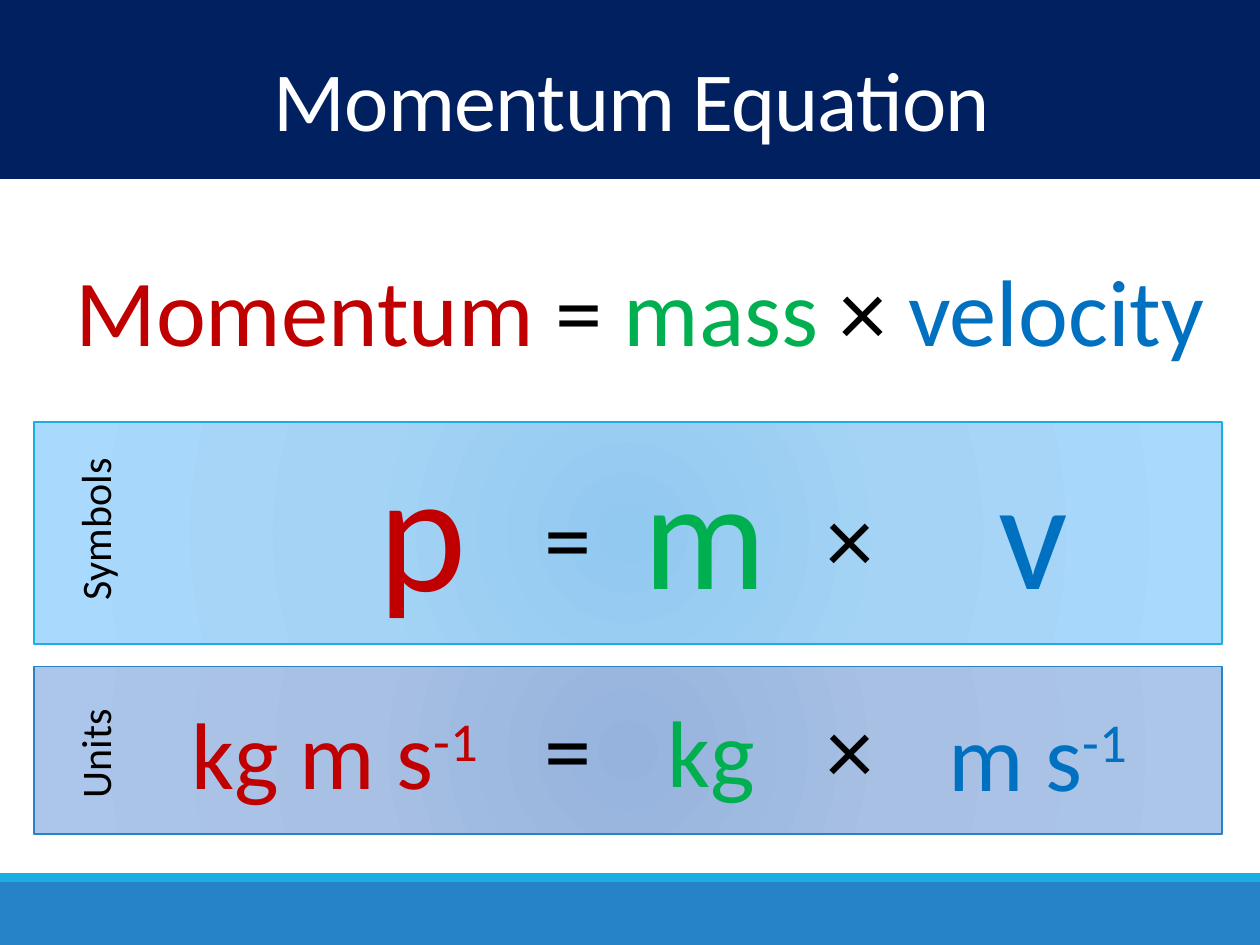
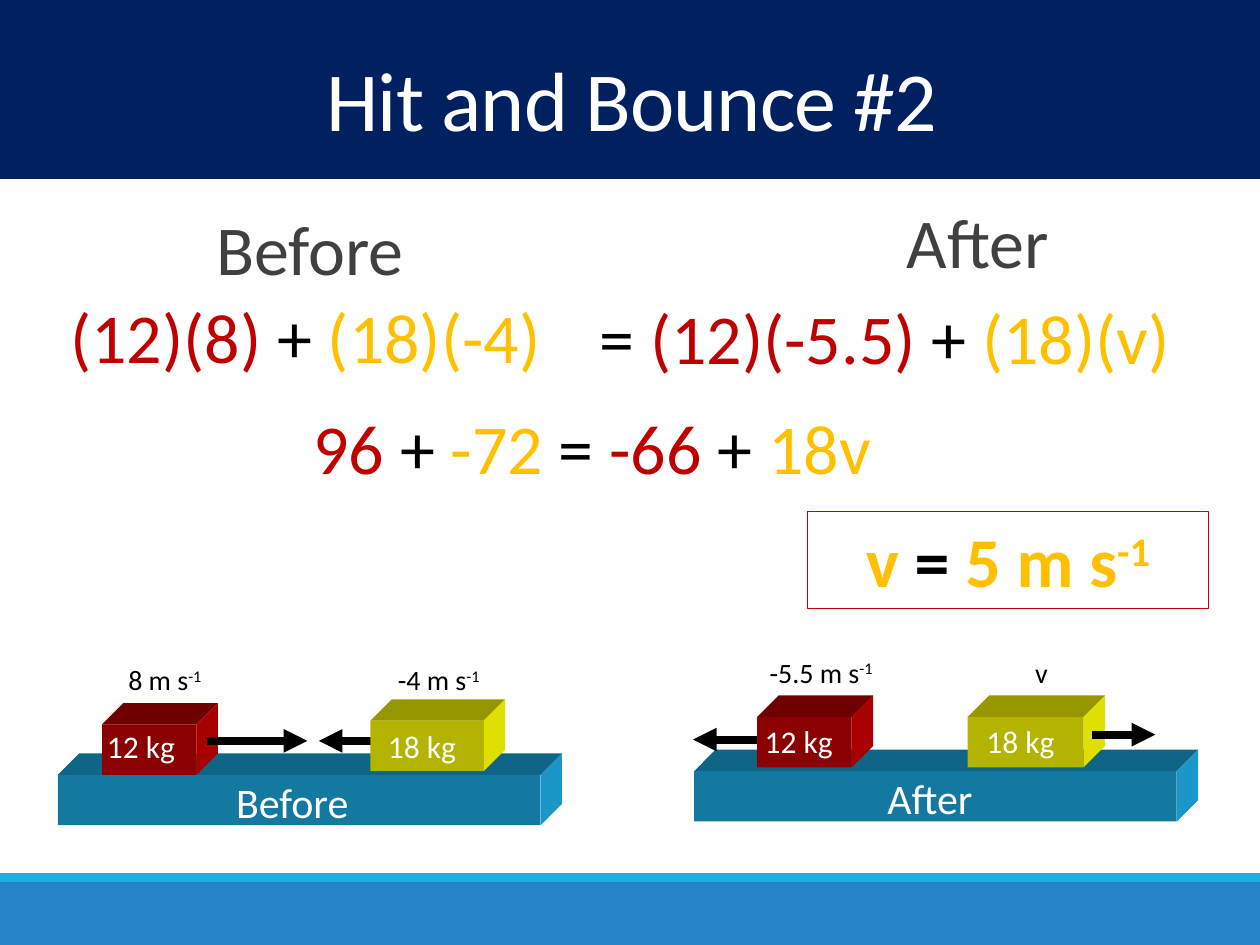
from pptx import Presentation
from pptx.dml.color import RGBColor
from pptx.enum.shapes import MSO_CONNECTOR as Connector, MSO_SHAPE as Preset
from pptx.enum.text import MSO_ANCHOR as Anchor, MSO_AUTO_SIZE as AutoSize, PP_ALIGN as Align
from pptx.oxml import parse_xml
from pptx.oxml.ns import nsdecls, qn
from pptx.util import Inches, Pt

FONT = "Calibri"
COLOURS = {
    "navy": "002060", "blue": "2683C6", "sky": "1CADE4", "white": "FFFFFF", "black": "000000",
    "grey": "404040", "red": "C00000", "green": "00B050", "azure": "0070C0", "amber": "FFC000",
}
# Front, top and side of each solid
SOLIDS = {
    "platform": ("1479A0", "0F6585", "1A96C8"),
    "red block": ("8B0000", "700000", "A80000"),
    "yellow block": ("B4B400", "969600", "E0E000"),
}

deck = Presentation()
deck.slide_width, deck.slide_height = Inches(10), Inches(7.5)
CELL = deck.slide_width // 10  # the slide is a grid of 10 columns by 7.5 rows
DEPTH = 0.17


def cells(*counts):
    return [round(count * CELL) for count in counts]


def write(page, spans, left, top, width, height, size, align=Align.LEFT):
    """Text box made of (text, colour) spans; a leading ^ raises the span."""
    box = page.shapes.add_textbox(*cells(left, top, width, height))
    box.text_frame.word_wrap = True
    para = box.text_frame.paragraphs[0]
    para.alignment = align
    para.font.name, para.font.size = FONT, Pt(size)
    for text, colour in spans:
        span = para.add_run()
        span.text = text.lstrip("^")
        span.font.color.rgb = RGBColor.from_string(COLOURS[colour])
        if text.startswith("^"):
            span._r.get_or_add_rPr().set("baseline", "30000")
    return box


# Shared frame: title band, two footer bands, title
BANDS = [("navy", 0, 1.42), ("blue", 7, 0.5), ("sky", 6.93, 0.07)]
pages = []
for heading in ("Momentum Equation", "Hit and Bounce #2"):
    page = deck.slides.add_slide(deck.slide_layouts[5])
    for colour, top, height in BANDS:
        band = page.shapes.add_shape(Preset.RECTANGLE, *cells(0, top, 10, height))
        band.shadow.inherit = False
        band.fill.solid()
        band.fill.fore_color.rgb = RGBColor.from_string(COLOURS[colour])
        band.line.fill.background()
    title = page.shapes.title
    title.element.getparent().append(title.element)  # bring in front of the band
    title.left, title.top, title.width, title.height = cells(0.03, 0.42, 9.97, 0.84)
    title.text = heading
    title.text_frame.auto_size = AutoSize.NONE
    title.text_frame.vertical_anchor = Anchor.MIDDLE
    para = title.text_frame.paragraphs[0]
    para.alignment, para.line_spacing = Align.CENTER, 0.85
    para.font.name, para.font.size = FONT, Pt(48)
    para.font.color.rgb = RGBColor.from_string(COLOURS["white"])
    para.runs[0]._r.get_or_add_rPr().set("spc", "-50")
    pages.append(page)
equation_page, bounce_page = pages

# Slide 1: panels with a radial gradient, a sideways label and two operators
PANELS = [
    ("Symbols", 3.35, 1.76, "sky", ("92C9F0", "A4D3F5", "A9D9FD"), 4.2, 3.75),
    ("Units", 5.29, 1.33, "blue", ("95B3DD", "A7C0E3", "ACC6EB"), 5.98, 5.43),
]
for label, top, height, edge, shades, label_middle, operator_top in PANELS:
    panel = equation_page.shapes.add_shape(Preset.RECTANGLE, *cells(0.27, top, 9.43, height))
    panel.shadow.inherit = False
    panel.line.color.rgb = RGBColor.from_string(COLOURS[edge])
    panel.line.width = Pt(1)
    panel.fill.gradient()
    stops = "".join(f'<a:gs pos="{share}000"><a:srgbClr val="{shade}"/></a:gs>'
                    for share, shade in zip((0, 45, 100), shades))
    gradient = panel.element.spPr.find(qn("a:gradFill"))
    gradient.getparent().replace(gradient, parse_xml(
        f'<a:gradFill {nsdecls("a")} rotWithShape="1"><a:gsLst>{stops}</a:gsLst><a:path path="circle">'
        '<a:fillToRect l="100000" t="100000" r="100000" b="100000"/></a:path></a:gradFill>'))
    tag = write(equation_page, [(label, "black")], -0.05, label_middle - 0.25, 1.6, 0.5, 24, Align.CENTER)
    tag.rotation = 270
    for operator, middle in (("=", 4.51), ("×", 6.75)):
        write(equation_page, [(operator, "black")], middle - 0.4, operator_top, 0.8, 1.01, 54, Align.CENTER)

# Slide 1: equation in words, symbols and units
EQUATION_TEXTS = [
    ([("Momentum", "red"), (" = ", "black"), ("mass", "green"), (" × ", "black"), ("velocity", "azure")],
     0.5, 1.95, 9.4, 1.01, 54),
    ([("p", "red")], 2.91, 3.31, 1.1, 1.72, 96),
    ([("m", "green")], 5.01, 3.41, 1.4, 1.58, 88),
    ([("v", "azure")], 7.83, 3.41, 1, 1.58, 88),
    ([("kg m s", "red"), ("^-1", "red")], 1.42, 5.47, 3, 1.01, 54),
    ([("kg", "green")], 5.2, 5.45, 1.2, 1.01, 54),
    ([("m s", "azure"), ("^-1", "azure")], 7.43, 5.48, 2, 1.01, 54),
]
for row in EQUATION_TEXTS:
    write(equation_page, *row)

# Slide 2: worked solution
SOLUTION_TEXTS = [
    ([("Before", "grey")], 1.62, 1.58, 2),
    ([("After", "grey")], 7.1, 1.53, 1.6),
    ([("(12)(8) ", "red"), ("+ ", "black"), ("(18)(-4)", "amber")], 0.46, 2.28, 4.5),
    ([("= ", "black"), ("(12)(-5.5) ", "red"), ("+ ", "black"), ("(18)(v)", "amber")], 4.66, 2.29, 5.3),
    ([("96 ", "red"), ("+ ", "black"), ("-72 ", "amber"), ("= ", "black"), ("-66 ", "red"),
      ("+ ", "black"), ("18v", "amber")], 2.39, 3.16, 5.6),
]
for spans, left, top, width in SOLUTION_TEXTS:
    write(bounce_page, spans, left, top, width, 0.77, 40)
answer = write(bounce_page, [("v ", "amber"), ("= ", "black"), ("5 m s", "amber"), ("^-1", "amber")],
               6.41, 4.06, 3.18, 0.77, 40, Align.CENTER)
answer.text_frame.paragraphs[0].font.bold = True
answer.line.color.rgb = RGBColor.from_string(COLOURS["red"])
answer.line.width = Pt(0.75)

# Slide 2: the two collision scenes, each listed from back to front
SCENES = [
    [("solid", "platform", 0.46, 6.15, 3.83), ("arrow", 3.03, 2.53, 5.88),
     ("solid", "red block", 0.81, 5.75, 0.75), ("solid", "yellow block", 2.94, 5.72, 0.9),
     ("arrow", 1.64, 2.44, 5.88),
     ("text", [("8 m s", "black"), ("^-1", "black")], 0.92, 5.21, 1.1, 0.37, 16),
     ("text", [("-4 m s", "black"), ("^-1", "black")], 3.06, 5.21, 1.1, 0.37, 16),
     ("text", [("12 kg", "white")], 0.75, 5.72, 0.94, 0.4, 18),
     ("text", [("18 kg", "white")], 2.98, 5.72, 0.94, 0.4, 18),
     ("text", [("Before", "white")], 1.51, 6.11, 1.62, 0.51, 24, Align.CENTER)],
    [("solid", "platform", 5.51, 6.12, 3.83), ("arrow", 6.05, 5.5, 5.87),
     ("solid", "red block", 6.01, 5.69, 0.75), ("solid", "yellow block", 7.68, 5.69, 0.92),
     ("arrow", 8.67, 9.17, 5.83),
     ("text", [("-5.5 m s", "black"), ("^-1", "black")], 6.01, 5.15, 1.2, 0.37, 16),
     ("text", [("v", "black")], 7.7, 5.15, 1.13, 0.37, 16, Align.CENTER),
     ("text", [("12 kg", "white")], 5.97, 5.68, 0.94, 0.4, 18),
     ("text", [("18 kg", "white")], 7.73, 5.68, 0.94, 0.4, 18),
     ("text", [("After", "white")], 6.57, 6.08, 1.62, 0.51, 24, Align.CENTER)],
]
for kind, *details in SCENES[0] + SCENES[1]:
    if kind == "text":
        write(bounce_page, *details)
    elif kind == "arrow":
        start, end, height = details
        arrow = bounce_page.shapes.add_connector(Connector.STRAIGHT, *cells(start, height, end, height))
        arrow.line.color.rgb = RGBColor.from_string(COLOURS["black"])
        arrow.line.width = Pt(4.5)
        arrow.line._get_or_add_ln().append(parse_xml(f'<a:tailEnd {nsdecls("a")} type="triangle"/>'))
        arrow.element.spPr.append(parse_xml(f'<a:effectLst {nsdecls("a")}/>'))
    else:
        name, left, top, width = details
        right, bottom = left + width, top + 0.4
        front = bounce_page.shapes.add_shape(Preset.RECTANGLE, *cells(left, top, width, 0.4))
        faces = [front]
        back_right = (right + DEPTH, top - DEPTH)
        for corners in (
            [(left, top), (left + DEPTH, top - DEPTH), back_right, (right, top)],
            [(right, top), back_right, (right + DEPTH, bottom - DEPTH), (right, bottom)],
        ):
            outline = bounce_page.shapes.build_freeform(*cells(*corners[0]))
            outline.add_line_segments([cells(*corner) for corner in corners[1:]], close=True)
            faces.append(outline.convert_to_shape())
        for face, shade in zip(faces, SOLIDS[name]):
            face.shadow.inherit = False
            face.fill.solid()
            face.fill.fore_color.rgb = RGBColor.from_string(shade)
            face.line.fill.background()

deck.save("out.pptx")
